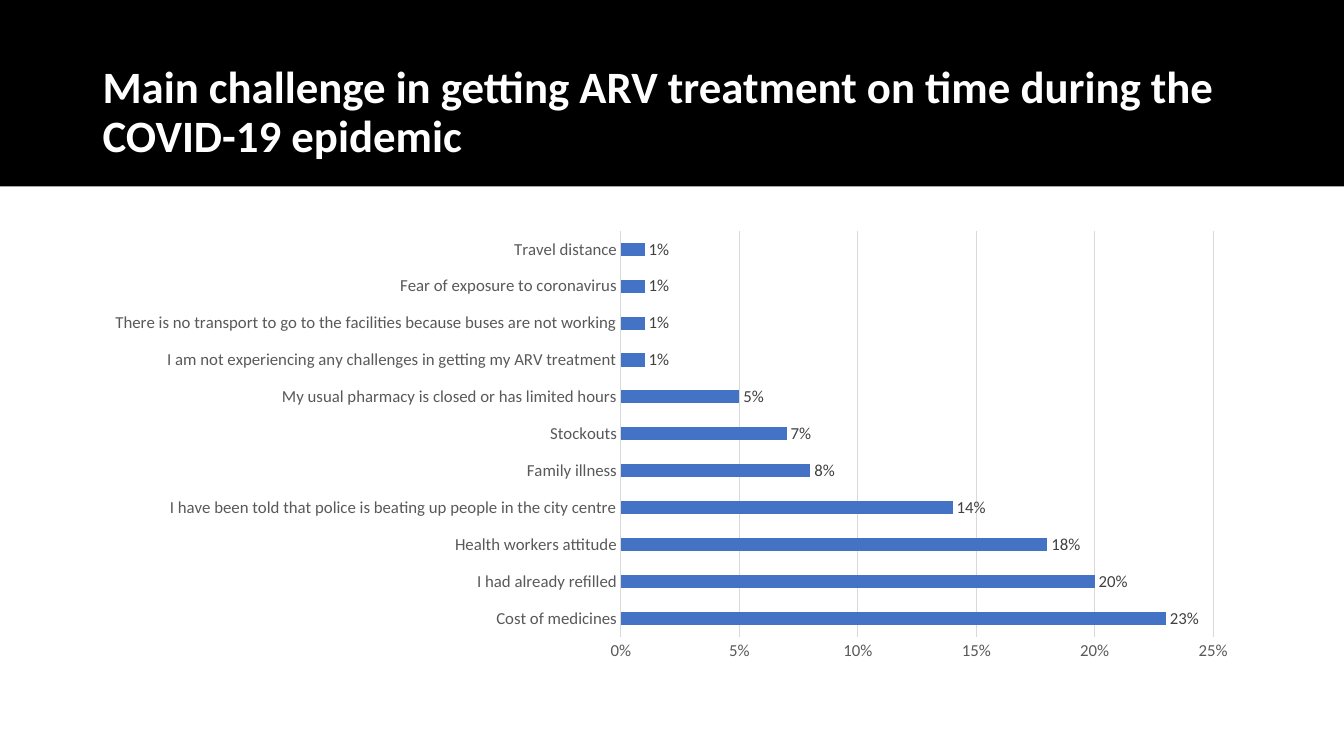
import pptx
import pptx.chart.data
import pptx.dml.color
import pptx.enum.chart
import pptx.enum.shapes
import pptx.enum.text
import pptx.oxml
import pptx.oxml.ns
import pptx.util
from pptx.util import Cm

COLORS = {"band": "000000", "page": "FFFFFF", "title": "FFFFFF", "bar": "4472C4",
          "grid": "D9D9D9", "axis": "595959", "label": "404040"}
W, H, BAND_H = 33.87, 19.05, 4.7
MARGIN, CONTENT_W = 2.33, 29.21
TITLE = "Main challenge in getting ARV treatment on time during the COVID-19 epidemic"
CHALLENGES = [
    ("Cost of medicines", 0.23),
    ("I had already refilled", 0.2),
    ("Health workers attitude", 0.18),
    ("I have been told that police is beating up people in the city centre", 0.14),
    ("Family illness", 0.08),
    ("Stockouts", 0.07),
    ("My usual pharmacy is closed or has limited hours", 0.05),
    ("I am not experiencing any challenges in getting my ARV treatment", 0.01),
    ("There is no transport to go to the facilities because buses are not working", 0.01),
    ("Fear of exposure to coronavirus", 0.01),
    ("Travel distance", 0.01),
]
PLOT_BOX = {"x": 0.456, "y": 0.02, "w": 0.511, "h": 0.906}


def rgb(name):
    """Return the named palette colour."""
    return pptx.dml.color.RGBColor.from_string(COLORS[name])


def set_attrs(obj, values):
    """Set each attribute in the dict on the object."""
    for name, value in values.items():
        setattr(obj, name, value)


def set_font(font, size, color, bold=False):
    """Format a font in the slide's typeface."""
    set_attrs(font, {"name": "Calibri", "size": pptx.util.Pt(size), "bold": bold})
    font.color.rgb = rgb(color)


def add_panel(s, x, y, w, h, color):
    """Fill the given box with a plain rectangle."""
    sp = s.shapes.add_shape(pptx.enum.shapes.MSO_SHAPE.RECTANGLE, Cm(x), Cm(y), Cm(w), Cm(h))
    sp.shadow.inherit = False
    sp.fill.solid()
    sp.fill.fore_color.rgb = rgb(color)
    sp.line.fill.background()


def add_header(s, x, y, w, h):
    """Draw the dark band and set the title in its lower part."""
    add_panel(s, x, y, w, h, "band")
    sp = s.shapes.title
    sp.element.getparent().append(sp.element)
    set_attrs(sp, {"left": Cm(x + MARGIN), "top": Cm(y + 1.01),
                   "width": Cm(CONTENT_W), "height": Cm(h - 1.01)})
    tf = sp.text_frame
    set_attrs(tf, {"word_wrap": True, "auto_size": pptx.enum.text.MSO_AUTO_SIZE.NONE,
                   "vertical_anchor": pptx.enum.text.MSO_ANCHOR.MIDDLE})
    p = tf.paragraphs[0]
    set_attrs(p, {"alignment": pptx.enum.text.PP_ALIGN.LEFT, "line_spacing": 0.9})
    r = p.add_run()
    r.text = TITLE
    set_font(r.font, 32, "title", True)


def fix_plot_area(chart):
    """Pin the inner plot area so the category labels keep one line each."""
    area = chart.element.find(".//" + pptx.oxml.ns.qn("c:plotArea"))
    for old in area.findall(pptx.oxml.ns.qn("c:layout")):
        area.remove(old)
    sizes = "".join(f'<c:{k} val="{v}"/>' for k, v in PLOT_BOX.items())
    area.insert(0, pptx.oxml.parse_xml(
        f'<c:layout {pptx.oxml.ns.nsdecls("c")}><c:manualLayout><c:layoutTarget val="inner"/>'
        f'<c:xMode val="edge"/><c:yMode val="edge"/>{sizes}</c:manualLayout></c:layout>'))


def add_challenges_chart(s, x, y, w, h):
    """Draw the bar chart of challenges in the given box."""
    enum = pptx.enum.chart
    data = pptx.chart.data.CategoryChartData(number_format="0%")
    data.categories = [name for name, share in CHALLENGES]
    data.add_series("Series 1", [share for name, share in CHALLENGES])
    chart = s.shapes.add_chart(enum.XL_CHART_TYPE.BAR_CLUSTERED,
                               Cm(x), Cm(y), Cm(w), Cm(h), data).chart
    set_attrs(chart, {"has_legend": False, "has_title": False})
    set_font(chart.font, 12, "axis")
    cat, val = chart.category_axis, chart.value_axis
    for axis in (cat, val):
        set_attrs(axis, {"major_tick_mark": enum.XL_TICK_MARK.NONE,
                         "minor_tick_mark": enum.XL_TICK_MARK.NONE})
        set_font(axis.tick_labels.font, 12, "axis")
    set_attrs(val, {"minimum_scale": 0, "maximum_scale": 0.25, "major_unit": 0.05,
                    "has_major_gridlines": True})
    set_attrs(val.tick_labels, {"number_format": "0%", "number_format_is_linked": False})
    val.format.line.fill.background()
    for line in (cat.format.line, val.major_gridlines.format.line):
        line.color.rgb = rgb("grid")
        line.width = pptx.util.Pt(0.75)
    plot = chart.plots[0]
    set_attrs(plot, {"gap_width": 182, "vary_by_categories": False, "has_data_labels": True})
    fill = plot.series[0].format.fill
    fill.solid()
    fill.fore_color.rgb = rgb("bar")
    labels = plot.data_labels
    set_attrs(labels, {"show_value": True, "number_format": "0%",
                       "number_format_is_linked": False,
                       "position": enum.XL_LABEL_POSITION.OUTSIDE_END})
    set_font(labels.font, 12, "label")
    fix_plot_area(chart)


def main():
    """Build the slide and save it."""
    prs = pptx.Presentation()
    set_attrs(prs, {"slide_width": Cm(W), "slide_height": Cm(H)})
    s = prs.slides.add_slide(prs.slide_layouts[5])
    add_panel(s, 0, BAND_H, W, H - BAND_H, "page")
    add_header(s, 0, 0, W, BAND_H)
    add_challenges_chart(s, MARGIN, 5.59, CONTENT_W, 11.3)
    prs.save("out.pptx")


if __name__ == "__main__":
    main()
